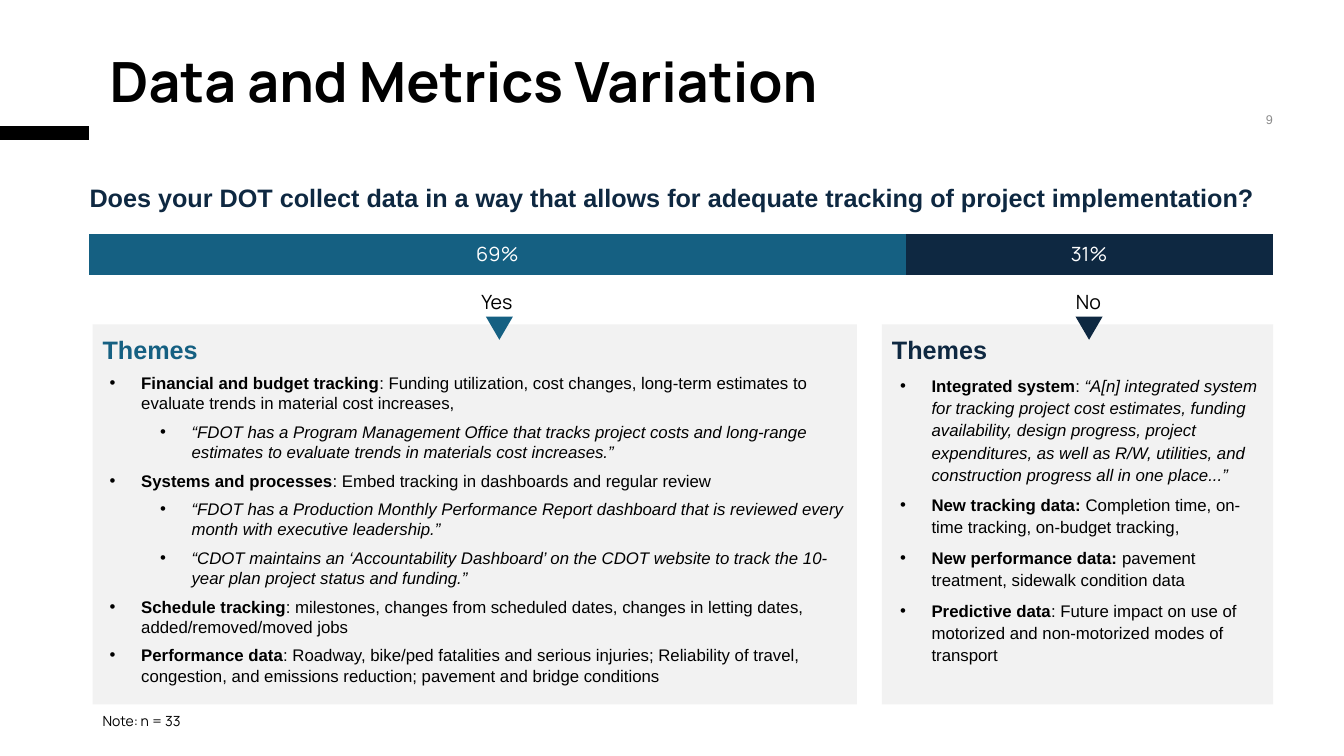
from lxml import etree
from pptx import Presentation
from pptx import util as u
from pptx.chart import data as chart_data
from pptx.dml.color import RGBColor
from pptx.enum import chart as charts, shapes, text
from pptx.oxml.ns import qn

BLACK = RGBColor(0x00, 0x00, 0x00)
WHITE = RGBColor(0xFF, 0xFF, 0xFF)
GRAY = RGBColor(0x8C, 0x8C, 0x8C)
PANEL = RGBColor(0xF2, 0xF2, 0xF2)
TEAL = RGBColor(0x15, 0x60, 0x82)
NAVY = RGBColor(0x0E, 0x28, 0x41)
BODY, DISPLAY = "Arial", "Manrope"
LEFT, CENTER, RIGHT = text.PP_ALIGN.LEFT, text.PP_ALIGN.CENTER, text.PP_ALIGN.RIGHT

# Each theme: label, remaining text, quotations listed below it
YES_THEMES = [
    ("Financial and budget tracking",
     ": Funding utilization, cost changes, long-term estimates to evaluate trends in "
     "material cost increases,",
     ["“FDOT has a Program Management Office that tracks project costs and long-range "
      "estimates to evaluate trends in materials cost increases.”"]),
    ("Systems and processes", ": Embed tracking in dashboards and regular review",
     ["“FDOT has a Production Monthly Performance Report dashboard that is reviewed every "
      "month with executive leadership.”",
      "“CDOT maintains an ‘Accountability Dashboard’ on the CDOT website to track the "
      "10-year plan project status and funding.”"]),
    ("Schedule tracking",
     ": milestones, changes from scheduled dates, changes in letting dates, "
     "added/removed/moved jobs", []),
    ("Performance data",
     ": Roadway, bike/ped fatalities and serious injuries; Reliability of travel, "
     "congestion, and emissions reduction; pavement and bridge conditions", []),
]
# Each theme: label, plain text, italic quotation
NO_THEMES = [
    ("Integrated system", ": ",
     "“A[n] integrated system for tracking project cost estimates, funding availability, "
     "design progress, project expenditures, as well as R/W, utilities, and construction "
     "progress all in one place...”"),
    ("New tracking data: ", "Completion time, on-time tracking, on-budget tracking,", ""),
    ("New performance data: ", "pavement treatment, sidewalk condition data", ""),
    ("Predictive data",
     ": Future impact on use of motorized and non-motorized modes of transport", ""),
]


class SlideBuilder:
    def __init__(self, slide):
        self.slide = slide

    def place(self, left, top, width, height):
        return [u.Pt(value) for value in (left, top, width, height)]

    def style(self, font, size, color, name=BODY, bold=None, italic=None):
        font.size, font.name = u.Pt(size), name
        font.bold, font.italic = bold, italic
        font.color.rgb = color

    def label(self, at, words, size, color, name=BODY, bold=None, align=LEFT,
              inset=True, wrap=True, anchor=text.MSO_ANCHOR.TOP, spacing=None):
        frame = self.slide.shapes.add_textbox(*self.place(*at)).text_frame
        frame.word_wrap, frame.vertical_anchor = wrap, anchor
        if not inset:
            frame.margin_left = frame.margin_right = 0
            frame.margin_top = frame.margin_bottom = 0
        para = frame.paragraphs[0]
        para.text, para.alignment, para.line_spacing = words, align, spacing
        self.style(para.font, size, color, name, bold)

    def shape(self, kind, at, color):
        shape = self.slide.shapes.add_shape(kind, *self.place(*at))
        shape.shadow.inherit = False
        shape.fill.solid()
        shape.fill.fore_color.rgb = color
        shape.line.fill.background()
        return shape

    def panel(self, at, heading, color):
        frame = self.shape(shapes.MSO_SHAPE.RECTANGLE, at, PANEL).text_frame
        frame.vertical_anchor = text.MSO_ANCHOR.TOP
        frame.margin_left = frame.margin_right = u.Pt(7.2)
        frame.margin_top = frame.margin_bottom = u.Pt(7.2)
        para = frame.paragraphs[0]
        para.text, para.alignment, para.space_after = heading, LEFT, u.Pt(12)
        self.style(para.font, 18, color, bold=True)

    def pointer(self, left, color):
        """Triangle pointing down from an answer into its panel."""
        at = (left, 226.1, 19.4, 16.6)
        self.shape(shapes.MSO_SHAPE.ISOSCELES_TRIANGLE, at, color).rotation = 180

    def bullets(self, at, items, spacing=None):
        """Write items of (level, [(words, bold, italic), ...])."""
        frame = self.slide.shapes.add_textbox(*self.place(*at)).text_frame
        frame.word_wrap = True
        for index, (level, spans) in enumerate(items):
            para = frame.add_paragraph() if index else frame.paragraphs[0]
            para.level, para.space_after, para.line_spacing = level, u.Pt(6), spacing
            props = para._p.get_or_add_pPr()
            props.set("marL", str(u.Pt(22.5 + 36 * level)))
            props.set("indent", str(u.Pt(-22.5)))
            etree.SubElement(props, qn("a:buFont"), typeface=BODY)
            etree.SubElement(props, qn("a:buChar"), char="•")
            self.style(para.font, 12, BLACK)
            for words, bold, italic in spans:
                span = para.add_run()
                span.text = words
                span.font.bold, span.font.italic = bold, italic

    def line(self, start, end, color, width):
        line = self.slide.shapes.add_connector(
            shapes.MSO_CONNECTOR.STRAIGHT, *self.place(*start, *end))
        line.line.color.rgb, line.line.width = color, u.Pt(width)
        etree.SubElement(line._element.spPr, qn("a:effectLst"))

    def share_bar(self, at, shares):
        data = chart_data.CategoryChartData()
        data.categories = ["1"]
        for number, (value, _) in enumerate(shares, 1):
            data.add_series(f"Series {number}", [value], '0"%"')
        chart = self.slide.shapes.add_chart(
            charts.XL_CHART_TYPE.BAR_STACKED, *self.place(*at), data).chart
        chart.has_legend = chart.has_title = False
        self.style(chart.font, 10, BLACK)
        values, categories = chart.value_axis, chart.category_axis
        values.minimum_scale, values.maximum_scale = 0, 100
        values.has_major_gridlines = values.visible = False
        categories.reverse_order = True
        categories.tick_label_position = charts.XL_TICK_LABEL_POSITION.NONE
        categories.major_tick_mark = charts.XL_TICK_MARK.NONE
        categories.format.line.color.rgb = WHITE
        categories.format.line.width = u.Pt(0.75)
        plot = chart.plots[0]
        plot.gap_width, plot.overlap, plot.vary_by_categories = 80, 100, False
        for series, (_, color) in zip(plot.series, shares):
            series.format.fill.solid()
            series.format.fill.fore_color.rgb = color
            labels = series.data_labels
            labels.show_value = True
            labels.position = charts.XL_LABEL_POSITION.CENTER
            self.style(labels.font, 14, WHITE, DISPLAY)
        area = chart._chartSpace.chart.plotArea
        layout = area.find(qn("c:layout"))
        if layout is None:
            layout = etree.Element(qn("c:layout"))
            area.insert(0, layout)
        manual = etree.SubElement(layout, qn("c:manualLayout"))
        for tag, value in (("layoutTarget", "inner"), ("xMode", "edge"), ("yMode", "edge"),
                           ("x", "0.008"), ("y", "0.242"), ("w", "0.985"), ("h", "0.516")):
            etree.SubElement(manual, qn(f"c:{tag}"), val=value)


def main():
    deck = Presentation()
    deck.slide_width, deck.slide_height = u.Pt(960), u.Pt(540)
    page = SlideBuilder(deck.slides.add_slide(deck.slide_layouts[6]))

    page.line((0, 95), (63.5, 95), BLACK, 9.5)
    page.label((71.3, 37.4, 802.8, 36), "Data and Metrics Variation", 39.6, BLACK,
               DISPLAY, bold=True, spacing=0.85)
    page.label((688.3, 71.3, 221, 27.4), "9", 9, GRAY, align=RIGHT, inset=False,
               anchor=text.MSO_ANCHOR.MIDDLE)
    page.share_bar((56.9, 131.8, 858.2, 100.1), [(69, TEAL), (31, NAVY)])
    page.label((56.9, 126.7, 852.5, 28.8),
               "Does your DOT collect data in a way that allows for adequate tracking of "
               "project implementation?", 18, NAVY, bold=True, wrap=False)

    answers = [("Yes", 342.7, 24.5, 66.2, 545.8, 347, TEAL),
               ("No", 768.2, 18.7, 630, 279.4, 768.2, NAVY)]
    for answer, left, width, panel_left, panel_width, pointer_left, color in answers:
        page.label((left, 207.4, width, 16.6), answer, 14, BLACK, DISPLAY,
                   align=CENTER, inset=False, wrap=False)
        page.panel((panel_left, 231.8, panel_width, 271.4), "Themes", color)
        page.pointer(pointer_left, color)

    page.label((66.2, 505.4, 655.2, 19.4), "Note: n = 33", 10, BLACK, DISPLAY)

    yes_items = []
    for theme, detail, quotes in YES_THEMES:
        yes_items.append((0, [(theme, True, None), (detail, None, None)]))
        yes_items += [(1, [(quote, None, True)]) for quote in quotes]
    page.bullets((71.3, 262.8, 540.7, 224.6), yes_items)

    no_items = []
    for theme, detail, quote in NO_THEMES:
        spans = [(theme, True, None), (detail, None, None)]
        no_items.append((0, spans + ([(quote, None, True)] if quote else [])))
    page.bullets((635.8, 263.5, 272.9, 223.2), no_items, spacing=1.1)

    deck.save("out.pptx")


if __name__ == "__main__":
    main()
